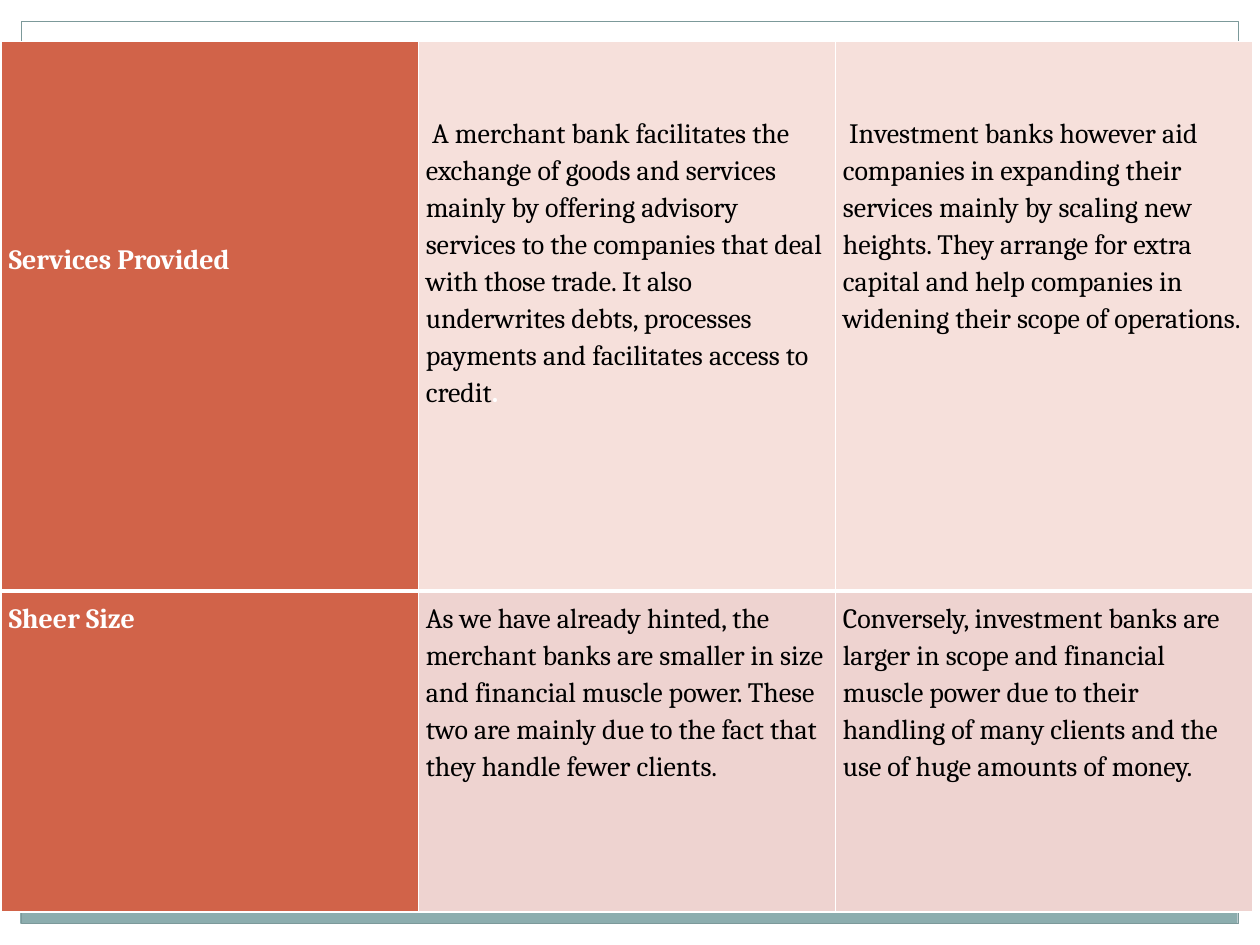
from dataclasses import dataclass

from lxml.etree import SubElement
from pptx import Presentation
from pptx.dml.color import RGBColor
from pptx.enum.shapes import MSO_SHAPE
from pptx.oxml.ns import qn
from pptx.slide import Slide
from pptx.table import Table, _Cell
from pptx.text.text import _Paragraph
from pptx.util import Inches, Pt

COLORS = {
    "background": "C5D1D7",
    "white": "FFFFFF",
    "black": "000000",
    "bar": "8CADAE",
    "frame": "7C999A",
    "heading": "D16349",
    "services": "F6E0DB",
    "size": "EED3D0",
}
PADDING = 0.06
COLUMN_WIDTH = 3.31
ROW_HEIGHTS = (4.36, 2.55)
RULE_WIDTHS = (1, 3, 1)


@dataclass(frozen=True)
class Panel:
    left: float
    top: float
    width: float
    height: float
    fill: str | None = "white"
    line: str | None = None


@dataclass(frozen=True)
class Entry:
    text: str
    fill: str
    color: str = "black"
    bold: bool = False
    drop: float = 0
    indent: float = 0
    full_stop: str = ""


PANELS = (
    Panel(0, 7.33, 10, 0.17),
    Panel(0, 0, 10, 1.52),
    Panel(0, 0, 0.17, 7.5),
    Panel(9.83, 0, 0.17, 7.5),
    Panel(0.16, 6.99, 9.66, 0.34, fill="bar"),
    Panel(0.17, 0.17, 9.66, 7.16, fill=None, line="frame"),
)

ROWS = (
    (
        Entry("Services Provided", "heading", color="white", bold=True, drop=1.51),
        Entry(
            "A merchant bank facilitates the exchange of goods and services "
            "mainly by offering advisory services to the companies that deal "
            "with those trade. It also underwrites debts, processes payments "
            "and facilitates access to credit",
            "services", drop=0.51, indent=0.05, full_stop=".",
        ),
        Entry(
            "Investment banks however aid companies in expanding their services "
            "mainly by scaling new heights. They arrange for extra capital and "
            "help companies in widening their scope of operations.",
            "services", drop=0.51, indent=0.05,
        ),
    ),
    (
        Entry("Sheer Size", "heading", color="white", bold=True),
        Entry(
            "As we have already hinted, the merchant banks are smaller in size "
            "and financial muscle power. These two are mainly due to the fact "
            "that they handle fewer clients.",
            "size",
        ),
        Entry(
            "Conversely, investment banks are larger in scope and financial "
            "muscle power due to their handling of many clients and the use of "
            "huge amounts of money.",
            "size",
        ),
    ),
)


def rgb(name: str) -> RGBColor:
    return RGBColor.from_string(COLORS[name])


def draw_panel(slide: Slide, panel: Panel) -> None:
    shape = slide.shapes.add_shape(
        MSO_SHAPE.RECTANGLE, Inches(panel.left), Inches(panel.top),
        Inches(panel.width), Inches(panel.height),
    )
    shape.shadow.inherit = False
    if panel.fill:
        shape.fill.solid()
        shape.fill.fore_color.rgb = rgb(panel.fill)
    else:
        shape.fill.background()
    if panel.line:
        shape.line.color.rgb = rgb(panel.line)
        shape.line.width = Pt(0.75)
    else:
        shape.line.fill.background()


def add_text(paragraph: _Paragraph, text: str, *, color: str = "black",
             bold: bool = False, size: float = 16, font: str = "Cambria") -> None:
    run = paragraph.add_run()
    run.text = text
    run.font.name = font
    run.font.size = Pt(size)
    run.font.bold = bold
    run.font.color.rgb = rgb(color)


def set_borders(cell: _Cell, top: float, bottom: float) -> None:
    properties = cell._tc.get_or_add_tcPr()
    for side, width in (("L", 1), ("R", 1), ("T", top), ("B", bottom)):
        line = SubElement(properties, qn(f"a:ln{side}"), w=str(Pt(width)))
        fill = SubElement(line, qn("a:solidFill"))
        SubElement(fill, qn("a:srgbClr"), val=COLORS["white"])


def fill_cell(cell: _Cell, entry: Entry) -> None:
    cell.fill.solid()
    cell.fill.fore_color.rgb = rgb(entry.fill)
    cell.margin_left = cell.margin_right = cell.margin_bottom = Inches(PADDING)
    cell.margin_top = Inches(PADDING + entry.drop)
    paragraph = cell.text_frame.paragraphs[0]
    paragraph.line_spacing = 1.15
    paragraph.space_after = Pt(15)
    if entry.indent:
        paragraph._p.get_or_add_pPr().set("indent", str(Inches(entry.indent)))
    add_text(paragraph, entry.text, color=entry.color, bold=entry.bold)
    if entry.full_stop:
        add_text(paragraph, entry.full_stop, color="white", bold=True)


def draw_table(slide: Slide) -> Table:
    column_count = len(ROWS[0])
    table = slide.shapes.add_table(
        len(ROWS), column_count, Inches(0.01), Inches(0.33),
        Inches(COLUMN_WIDTH * column_count), Inches(sum(ROW_HEIGHTS)),
    ).table
    table.first_row = False
    table.horz_banding = False
    for column in table.columns:
        column.width = Inches(COLUMN_WIDTH)
    for row_index, entries in enumerate(ROWS):
        table.rows[row_index].height = Inches(ROW_HEIGHTS[row_index])
        for column_index, entry in enumerate(entries):
            cell = table.cell(row_index, column_index)
            set_borders(cell, RULE_WIDTHS[row_index], RULE_WIDTHS[row_index + 1])
            fill_cell(cell, entry)
    return table


def main() -> None:
    presentation = Presentation()
    presentation.slide_width = Inches(10)
    presentation.slide_height = Inches(7.5)
    slide = presentation.slides.add_slide(presentation.slide_layouts[6])
    slide.background.fill.solid()
    slide.background.fill.fore_color.rgb = rgb("background")
    for panel in PANELS:
        draw_panel(slide, panel)
    draw_table(slide)
    presentation.save("out.pptx")


if __name__ == "__main__":
    main()
